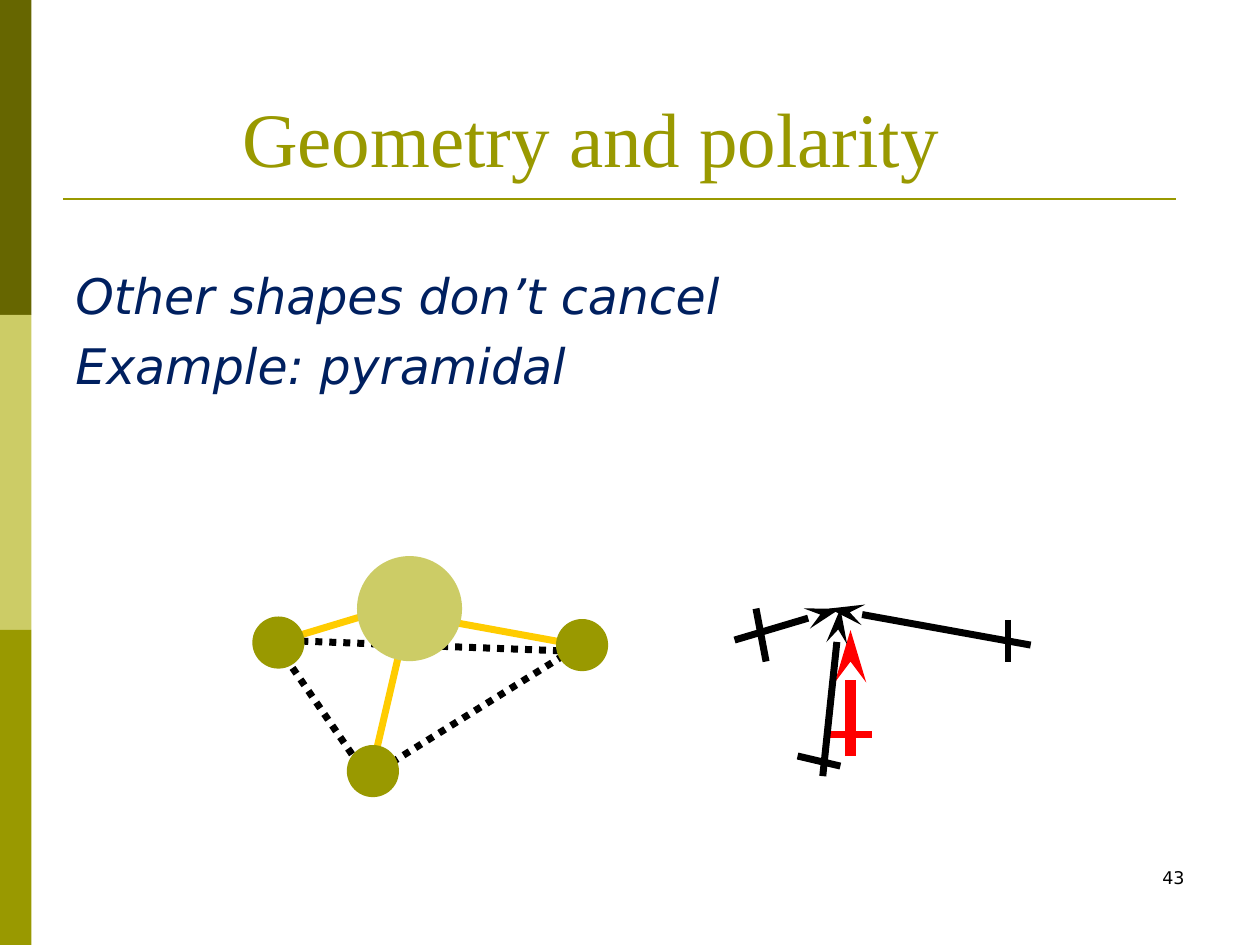
from lxml.etree import SubElement
from pptx import Presentation
from pptx.dml.color import RGBColor
from pptx.enum.dml import MSO_LINE
from pptx.enum.shapes import MSO_CONNECTOR, MSO_SHAPE
from pptx.enum.text import MSO_ANCHOR, PP_ALIGN
from pptx.oxml.ns import qn
from pptx.util import Inches, Pt

BLACK = RGBColor(0, 0, 0)
RED = RGBColor(0xFF, 0, 0)
GOLD = RGBColor(0xFF, 0xCC, 0)
NAVY = RGBColor(0, 0x20, 0x60)
DARK = RGBColor(0x66, 0x66, 0)
OLIVE = RGBColor(0x99, 0x99, 0)
LIGHT = RGBColor(0xCC, 0xCC, 0x66)


class Canvas:
    sans = "DejaVu Sans"
    serif = "Times New Roman"

    def __init__(self, slide):
        self.slide = slide

    def shape(self, kind, box, color, edge=False):
        item = self.slide.shapes.add_shape(kind, *map(Inches, box))
        item.shadow.inherit = False
        item.fill.solid()
        item.fill.fore_color.rgb = color
        if edge:
            item.line.color.rgb = color
            item.line.width = Pt(1)
        else:
            item.line.fill.background()

    def ball(self, left, top, size, color):
        self.shape(MSO_SHAPE.OVAL, (left, top, size, size), color, edge=True)

    def line(self, start, end, color=BLACK, width=4, dots=False, arrow=False):
        """Draw a straight line; an arrow points at its end."""
        item = self.slide.shapes.add_connector(
            MSO_CONNECTOR.STRAIGHT, *map(Inches, start + end))
        item.line.color.rgb = color
        item.line.width = Pt(width)
        if dots:
            item.line.dash_style = MSO_LINE.ROUND_DOT
        props = item._element.spPr
        if arrow:
            SubElement(props.find(qn("a:ln")), qn("a:tailEnd"),
                       type="stealth", w="med", len="lg")
        SubElement(props, qn("a:effectLst"))

    def text(self, box, words, size, color, font=sans, italic=False,
             align=PP_ALIGN.LEFT, anchor=MSO_ANCHOR.TOP, gap=0):
        frame = self.slide.shapes.add_textbox(*map(Inches, box)).text_frame
        frame.word_wrap = True
        frame.vertical_anchor = anchor
        frame.text = words
        for para in frame.paragraphs:
            para.alignment = align
            para.space_before = Pt(gap)
            for run in para.runs:
                run.font.name = font
                run.font.size = Pt(size)
                run.font.italic = italic
                run.font.color.rgb = color


def frame_page(page):
    for row, color in enumerate((DARK, LIGHT, OLIVE)):
        page.shape(MSO_SHAPE.RECTANGLE, (0, 2.5 * row, 0.25, 2.5), color)
    page.line((0.5, 1.58), (9.33, 1.58), OLIVE, 1.5)
    page.text((7.17, 6.83, 2.33, 0.5), "43", 10, BLACK, align=PP_ALIGN.RIGHT)
    page.text((0.44, 0.73, 8.5, 0.77), "Geometry and polarity", 44, OLIVE,
              font=page.serif, align=PP_ALIGN.CENTER,
              anchor=MSO_ANCHOR.BOTTOM)
    page.text((0.5, 2.06, 8.94, 1.52),
              "Other shapes don’t cancel\nExample: pyramidal",
              28, NAVY, italic=True, gap=6)


def draw_pyramid(page):
    left, right, front = (2.17, 5.08), (4.58, 5.17), (2.92, 6.17)
    page.line(left, right, dots=True)
    for start, end in (((4.59, 5.12), (3, 4.83)),
                       ((3.08, 4.83), (2.25, 5.08)),
                       ((2.94, 6.16), (3.25, 4.83))):
        page.line(start, end, GOLD)
    page.ball(2.84, 4.42, 0.82, LIGHT)
    page.line(front, (4.67, 5.08), dots=True)
    page.line(front, left, dots=True)
    for x, y in ((2.01, 4.9), (2.76, 5.92), (4.42, 4.92)):
        page.ball(x, y, 0.4, OLIVE)


def draw_dipoles(page):
    page.line((6.75, 6), (6.75, 5), RED, 6, arrow=True)
    page.line((6.58, 5.83), (6.92, 5.83), RED)
    for start, end in (((8.18, 5.12), (6.58, 4.83)),
                       ((5.83, 5.08), (6.67, 4.83)),
                       ((6.53, 6.16), (6.67, 4.83))):
        page.line(start, end, arrow=True)
    for start, end in (((8, 4.92), (8, 5.25)),
                       ((6.33, 6), (6.67, 6.08)),
                       ((6, 4.83), (6.08, 5.25))):
        page.line(start, end)


def main():
    deck = Presentation()
    deck.slide_width, deck.slide_height = Inches(10), Inches(7.5)
    page = Canvas(deck.slides.add_slide(deck.slide_layouts[6]))
    frame_page(page)
    draw_pyramid(page)
    draw_dipoles(page)
    deck.save("out.pptx")


if __name__ == "__main__":
    main()
